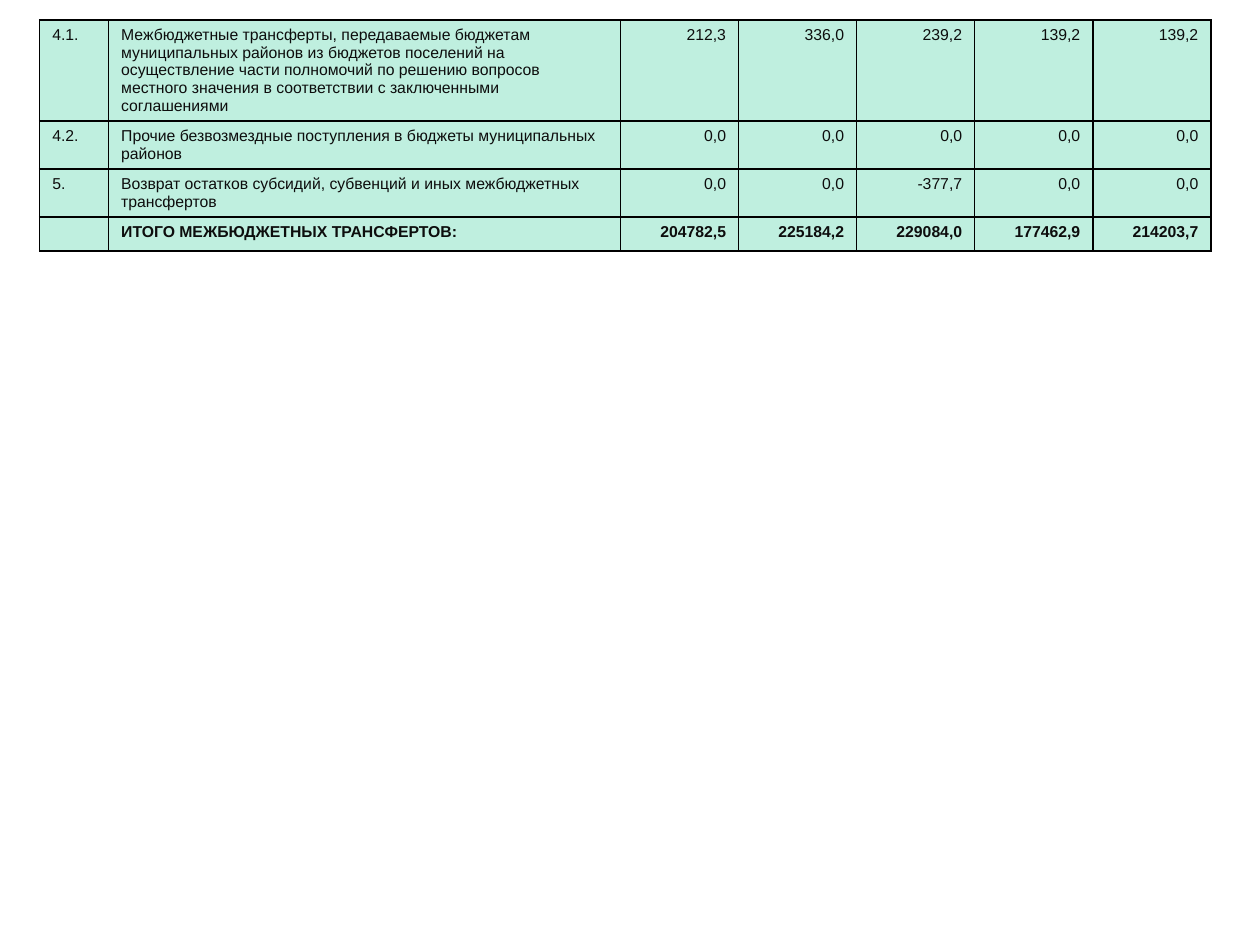
from dataclasses import dataclass

from lxml import etree
from pptx import Presentation
from pptx.dml.color import RGBColor
from pptx.enum.text import PP_ALIGN
from pptx.oxml.ns import qn
from pptx.util import Cm, Pt

LEFT, RIGHT = PP_ALIGN.LEFT, PP_ALIGN.RIGHT


@dataclass(frozen=True)
class Theme:
    font: str = "Arial"
    size: int = 9
    text: str = "0D0D0D"
    fill: str = "BFEFDF"
    border: str = "000000"
    border_width: int = 1


THEME = Theme()

TRANSFERS = [
    ("4.1.", "Межбюджетные трансферты, передаваемые бюджетам муниципальных "
     "районов из бюджетов поселений на осуществление части полномочий по "
     "решению вопросов местного значения в соответствии с заключенными "
     "соглашениями", "212,3", "336,0", "239,2", "139,2", "139,2"),
    ("4.2.", "Прочие безвозмездные поступления в бюджеты муниципальных районов",
     "0,0", "0,0", "0,0", "0,0", "0,0"),
    ("5.", "Возврат остатков субсидий, субвенций и иных межбюджетных трансфертов",
     "0,0", "0,0", "-377,7", "0,0", "0,0"),
    ("", "ИТОГО МЕЖБЮДЖЕТНЫХ ТРАНСФЕРТОВ:",
     "204782,5", "225184,2", "229084,0", "177462,9", "214203,7"),
]
LABEL_COLUMNS = 2
COLUMN_WIDTHS = [1.39, 10.32] + [2.38] * 5
ROW_HEIGHTS = [2.03, 0.97, 0.97, 0.69]
TABLE_LEFT, TABLE_TOP = 0.8, 0.4


def add_borders(cell):
    tc_pr = cell._tc.get_or_add_tcPr()
    for i, side in enumerate(("lnL", "lnR", "lnT", "lnB")):
        ln = etree.Element(qn(f"a:{side}"), w=str(Pt(THEME.border_width)))
        fill = etree.SubElement(ln, qn("a:solidFill"))
        etree.SubElement(fill, qn("a:srgbClr"), val=THEME.border)
        tc_pr.insert(i, ln)


def fill_cell(cell, text, align, bold):
    cell.fill.solid()
    cell.fill.fore_color.rgb = RGBColor.from_string(THEME.fill)
    add_borders(cell)
    p = cell.text_frame.paragraphs[0]
    p.alignment = align
    p.font.name = THEME.font
    p.font.size = Pt(THEME.size)
    p.font.bold = bold
    p.font.color.rgb = RGBColor.from_string(THEME.text)
    if text:
        p.add_run().text = text
    else:
        # An empty cell takes its line height from the end mark.
        etree.SubElement(p._p, qn("a:endParaRPr"), sz=str(THEME.size * 100))


def add_transfer_table(s):
    table = s.shapes.add_table(
        len(TRANSFERS), len(COLUMN_WIDTHS), Cm(TABLE_LEFT), Cm(TABLE_TOP),
        Cm(sum(COLUMN_WIDTHS)), Cm(sum(ROW_HEIGHTS))).table
    table.first_row = table.horz_banding = False
    for column, width in zip(table.columns, COLUMN_WIDTHS):
        column.width = Cm(width)
    for r, (row, height) in enumerate(zip(TRANSFERS, ROW_HEIGHTS)):
        table.rows[r].height = Cm(height)
        for c, text in enumerate(row):
            fill_cell(table.cell(r, c), text,
                      LEFT if c < LABEL_COLUMNS else RIGHT,
                      bold=r == len(TRANSFERS) - 1)


def main():
    prs = Presentation()
    prs.slide_width, prs.slide_height = Cm(25.4), Cm(19.05)
    s = prs.slides.add_slide(prs.slide_layouts[6])
    add_transfer_table(s)
    prs.save("out.pptx")


if __name__ == "__main__":
    main()
